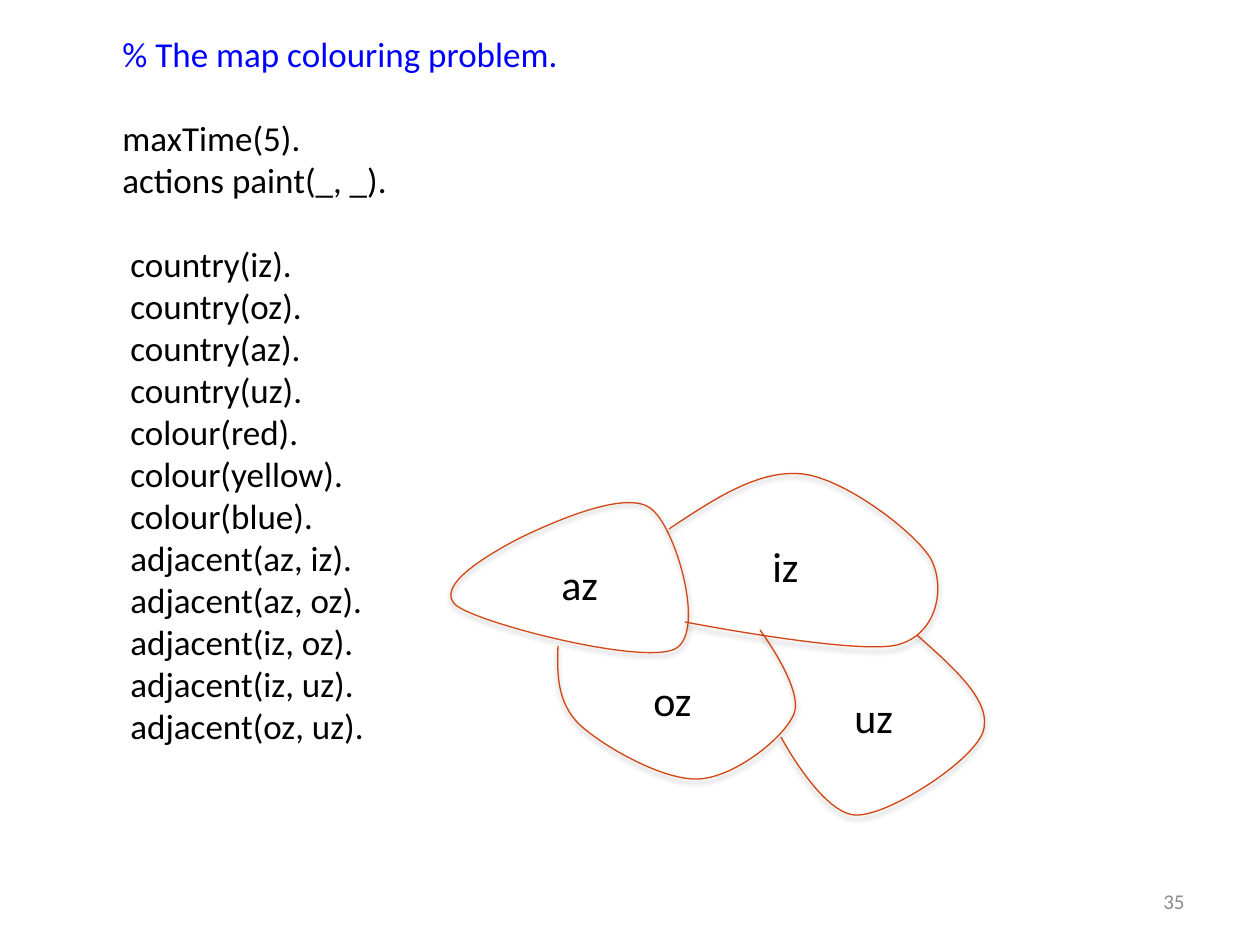
from lxml import etree
from pptx import Presentation
from pptx.dml.color import RGBColor
from pptx.enum.text import MSO_ANCHOR, MSO_AUTO_SIZE as AutoSize, PP_ALIGN
from pptx.oxml.ns import qn
from pptx.util import Pt

PX = 914400 / 126
FONT = "Calibri"
BLACK, BLUE, GREY = "000000", "0000FF", "8C8C8C"
AZ_LINE, MAP_LINE = "D34817", "D34412"
LINE_PITCH = 24
FACT_INDENT = 8

HEADER = ["maxTime(5).", "actions paint(_, _)."]
FACTS = [
    *(f"country({name})." for name in ("iz", "oz", "az", "uz")),
    *(f"colour({name})." for name in ("red", "yellow", "blue")),
    *(f"adjacent({pair})." for pair in ("az, iz", "az, oz", "iz, oz", "iz, uz", "oz, uz")),
]

REGIONS = [
    ((451, 503, 237, 150), AZ_LINE, True, [
        (520, 538), (489, 554), (432, 587), (457, 606), (484, 625), (643, 665), (675, 649),
        (707, 633), (675, 524), (650, 508), (625, 490), (553, 522), (520, 538)]),
    ((669, 474, 269, 173), MAP_LINE, False, [
        (669, 529), (714, 499), (759, 469), (803, 474), (845, 479), (915, 532), (931, 559),
        (946, 588), (937, 635), (897, 645), (855, 655), (685, 622), (685, 622)]),
    ((558, 630, 238, 149), MAP_LINE, False, [
        (558, 646), (557, 674), (557, 703), (580, 725), (604, 747), (664, 781), (699, 779),
        (735, 777), (784, 738), (794, 714), (804, 689), (760, 630), (760, 630)]),
    ((781, 635, 202, 180), MAP_LINE, False, [
        (917, 635), (955, 669), (993, 702), (983, 732), (973, 761), (890, 815), (857, 815),
        (823, 816), (781, 737), (781, 737)]),
]

LABELS = [
    ("uz", (842, 685, 87, 63)),
    ("oz", (641, 668, 87, 63)),
    ("az", (549, 552, 108, 63)),
    ("iz", (760, 534, 87, 63)),
]


def px(length):
    return round(length * PX)


def rgb(colour):
    return RGBColor.from_string(colour)


def add_box(slide, frame, autosize=AutoSize.SHAPE_TO_FIT_TEXT):
    text_frame = slide.shapes.add_textbox(*map(px, frame)).text_frame
    text_frame.word_wrap = True
    text_frame.auto_size = autosize
    return text_frame


def write(paragraph, text, size, colour=BLACK):
    paragraph.text = text
    paragraph.font.name = FONT
    paragraph.font.size = Pt(size)
    paragraph.font.color.rgb = rgb(colour)


def add_listing(slide):
    listing = add_box(slide, (110, 26, 1101, 772))
    write(listing.paragraphs[0], "% The map colouring problem.", 20, BLUE)
    for block, indent in ((HEADER, 0), (FACTS, FACT_INDENT)):
        for position, clause in enumerate(block):
            paragraph = listing.add_paragraph()
            write(paragraph, clause, 20)
            paragraph.space_before = Pt(0 if position else LINE_PITCH)
            paragraph._p.get_or_add_pPr().set("marL", str(px(indent)))


def bend_segments(outline):
    segments = outline.findall(qn("a:lnTo"))
    for first in range(0, len(segments), 3):
        curve = etree.Element(qn("a:cubicBezTo"))
        segments[first].addprevious(curve)
        for segment in segments[first:first + 3]:
            curve.append(segment[0])
            outline.remove(segment)


def fit_to_frame(region, outline, frame, points):
    left, top, width, height = frame
    shift_x = min(x for x, _ in points) - left
    shift_y = min(y for _, y in points) - top
    for point in outline.iter(qn("a:pt")):
        point.set("x", str(int(point.get("x")) + shift_x))
        point.set("y", str(int(point.get("y")) + shift_y))
    outline.set("w", str(width))
    outline.set("h", str(height))
    region.left, region.top, region.width, region.height = map(px, frame)


def add_shadow(shape):
    shape.shadow.inherit = False
    effects = shape._element.spPr.find(qn("a:effectLst"))
    shadow = etree.SubElement(effects, qn("a:outerShdw"), blurRad="40000",
                              dist="23000", dir="5400000", rotWithShape="0")
    tint = etree.SubElement(shadow, qn("a:srgbClr"), val=BLACK)
    etree.SubElement(tint, qn("a:alpha"), val="35000")


def add_region(slide, frame, colour, closed, points):
    builder = slide.shapes.build_freeform(*points[0], scale=PX)
    builder.add_line_segments(points[1:], close=closed)
    region = builder.convert_to_shape()
    outline = next(region._element.iter(qn("a:path")))
    bend_segments(outline)
    fit_to_frame(region, outline, frame, points)
    region.fill.background()
    region.line.color.rgb = rgb(colour)
    region.line.width = Pt(0.75)
    add_shadow(region)


def add_page_number(slide):
    page = add_box(slide, (903, 876, 294, 50), AutoSize.NONE)
    page.vertical_anchor = MSO_ANCHOR.MIDDLE
    write(page.paragraphs[0], "35", 12, GREY)
    page.paragraphs[0].alignment = PP_ALIGN.RIGHT


def main():
    deck = Presentation()
    deck.slide_width, deck.slide_height = px(1260), px(945)
    slide = deck.slides.add_slide(deck.slide_layouts[6])
    add_page_number(slide)
    add_listing(slide)
    for region in REGIONS:
        add_region(slide, *region)
    for name, frame in LABELS:
        write(add_box(slide, frame).paragraphs[0], name, 24)
    deck.save("out.pptx")


if __name__ == "__main__":
    main()
